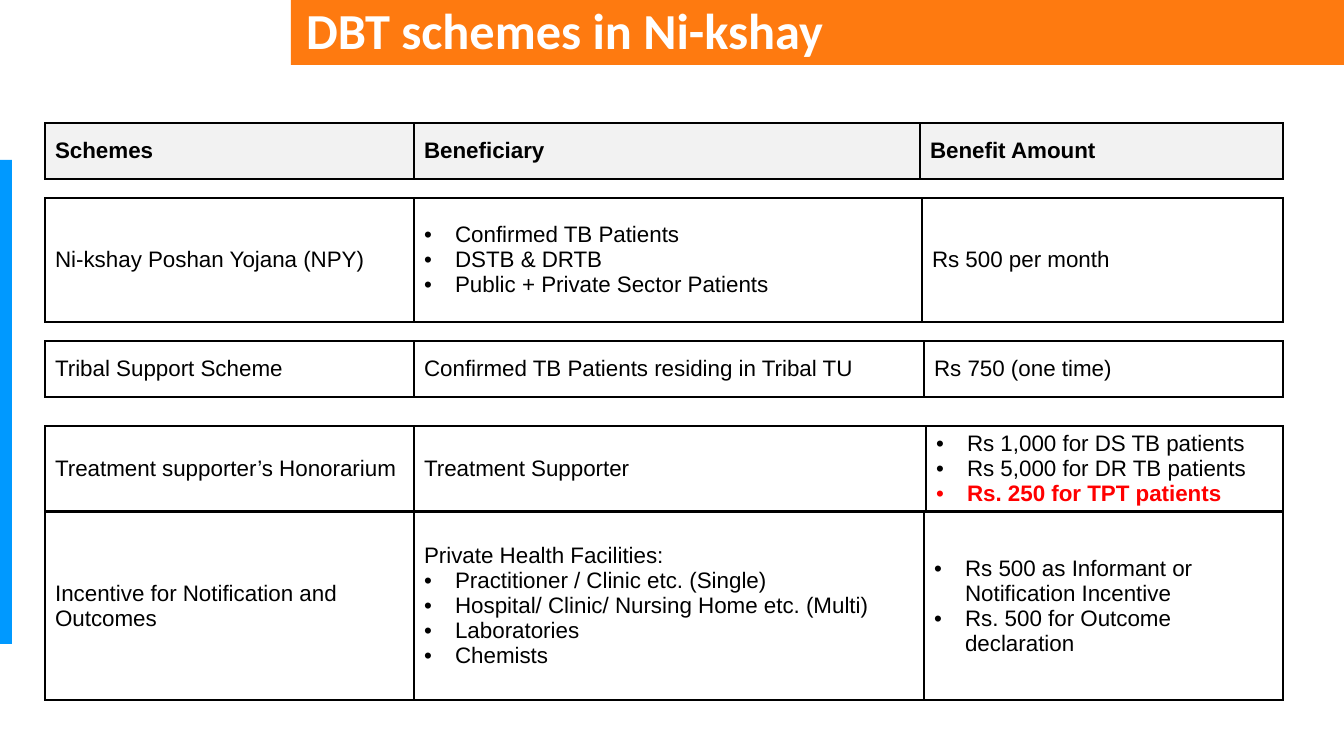
"""Build the slide that lists the DBT schemes in Ni-kshay."""
import pptx
import pptx.dml.color
import pptx.enum.shapes
import pptx.enum.text
import pptx.oxml
import pptx.oxml.ns
import pptx.util

RGBColor = pptx.dml.color.RGBColor
ORANGE = RGBColor(0xFE, 0x7A, 0x10)
BLUE = RGBColor(0x00, 0x99, 0xFF)
GREY = RGBColor(0xF2, 0xF2, 0xF2)
BLACK = RGBColor(0, 0, 0)
WHITE = RGBColor(0xFF, 0xFF, 0xFF)
RED = RGBColor(0xFF, 0, 0)

TITLE = "DBT schemes in Ni-kshay"
BULLET = "• "
HIGHLIGHT = "Rs. 250 for TPT patients"
BARS = [((291, 0, 1055, 65), ORANGE), ((0, 160, 12, 484), BLUE)]
TABLES = [
    {"top": 123, "height": 56, "middle": 506, "header": True,
     "cells": [["Schemes"], ["Beneficiary"], ["Benefit Amount"]]},
    {"top": 198, "height": 124, "middle": 508, "header": False,
     "cells": [["Ni-kshay Poshan Yojana (NPY)"],
               ["• Confirmed TB Patients", "• DSTB & DRTB",
                "• Public + Private Sector Patients"],
               ["Rs 500 per month"]]},
    {"top": 341, "height": 56, "middle": 510, "header": False,
     "cells": [["Tribal Support Scheme"],
               ["Confirmed TB Patients residing in Tribal TU"],
               ["Rs 750 (one time)"]]},
    {"top": 426, "height": 85, "middle": 512, "header": False,
     "cells": [["Treatment supporter’s Honorarium"],
               ["Treatment Supporter"],
               ["• Rs 1,000 for DS TB patients", "• Rs 5,000 for DR TB patients",
                BULLET + HIGHLIGHT]]},
    {"top": 512, "height": 188, "middle": 510, "header": False,
     "cells": [["Incentive for Notification and Outcomes"],
               ["Private Health Facilities:", "• Practitioner / Clinic etc. (Single)",
                "• Hospital/ Clinic/ Nursing Home etc. (Multi)",
                "• Laboratories", "• Chemists"],
               ["• Rs 500 as Informant or Notification Incentive",
                "• Rs. 500 for Outcome declaration"]]},
]
TABLE_LEFT, TABLE_WIDTH, FIRST_COLUMN = 45, 1238, 369
INDENT = 31


def px(length):
    return pptx.util.Emu(round(length * 914400 / 100.8))


def place(shape, left, top, width, height):
    shape.left, shape.top = px(left), px(top)
    shape.width, shape.height = px(width), px(height)


def add_bullet(para):
    properties = para._p.get_or_add_pPr()
    properties.set("marL", str(px(INDENT)))
    properties.set("indent", str(px(-INDENT)))
    namespace = pptx.oxml.ns.nsdecls("a")
    for tag in ('buFont typeface="Arial"', 'buChar char="•"'):
        properties.append(pptx.oxml.parse_xml(f"<a:{tag} {namespace}/>"))


def add_borders(cell):
    properties = cell._tc.get_or_add_tcPr()
    for side in ("lnL", "lnR", "lnT", "lnB"):
        properties.append(pptx.oxml.parse_xml(
            f'<a:{side} {pptx.oxml.ns.nsdecls("a")} w="12700"><a:solidFill>'
            f'<a:srgbClr val="{BLACK}"/></a:solidFill></a:{side}>'))


def style(font, size, name, color, bold):
    font.size = pptx.util.Pt(size)
    font.name = name
    font.color.rgb = color
    font.bold = bold


def fill_cell(cell, lines, header):
    add_borders(cell)
    if header:
        cell.fill.solid()
        cell.fill.fore_color.rgb = GREY
    else:
        cell.fill.background()
    cell.vertical_anchor = pptx.enum.text.MSO_ANCHOR.MIDDLE
    cell.text_frame.text = "\n".join(line.removeprefix(BULLET) for line in lines)
    for line, para in zip(lines, cell.text_frame.paragraphs):
        if line.startswith(BULLET):
            add_bullet(para)
        marked = para.text == HIGHLIGHT
        for span in para.runs:
            style(span.font, 16, "Arial", RED if marked else BLACK, header or marked)


def add_scheme_table(page, scheme):
    table = page.shapes.add_table(
        1, 3, px(TABLE_LEFT), px(scheme["top"]), px(TABLE_WIDTH), px(scheme["height"])).table
    table.first_row = table.horz_banding = False
    middle = scheme["middle"]
    widths = (FIRST_COLUMN, middle, TABLE_WIDTH - FIRST_COLUMN - middle)
    for column, width in zip(table.columns, widths):
        column.width = px(width)
    for cell, lines in zip(table.rows[0].cells, scheme["cells"]):
        fill_cell(cell, lines, scheme["header"])


def add_title(page):
    title = page.shapes.title
    place(title, 296, 0, 987, 66)
    frame = title.text_frame
    frame.text = TITLE
    frame.word_wrap = True
    frame.auto_size = pptx.enum.text.MSO_AUTO_SIZE.NONE
    frame.vertical_anchor = pptx.enum.text.MSO_ANCHOR.MIDDLE
    para = frame.paragraphs[0]
    para.alignment = pptx.enum.text.PP_ALIGN.LEFT
    para.line_spacing = 0.9
    style(para.runs[0].font, 36, "Calibri", WHITE, True)
    for bounds, color in BARS:
        bar = page.shapes.add_shape(
            pptx.enum.shapes.MSO_SHAPE.RECTANGLE, *[px(length) for length in bounds])
        bar.shadow.inherit = False
        bar.fill.solid()
        bar.fill.fore_color.rgb = color
        bar.line.fill.background()
        title.element.addprevious(bar.element)


def main():
    deck = pptx.Presentation()
    deck.slide_width, deck.slide_height = px(1344), px(756)
    page = deck.slides.add_slide(deck.slide_layouts.get_by_name("Title Only"))
    add_title(page)
    for scheme in TABLES:
        add_scheme_table(page, scheme)
    deck.save("out.pptx")


if __name__ == "__main__":
    main()
